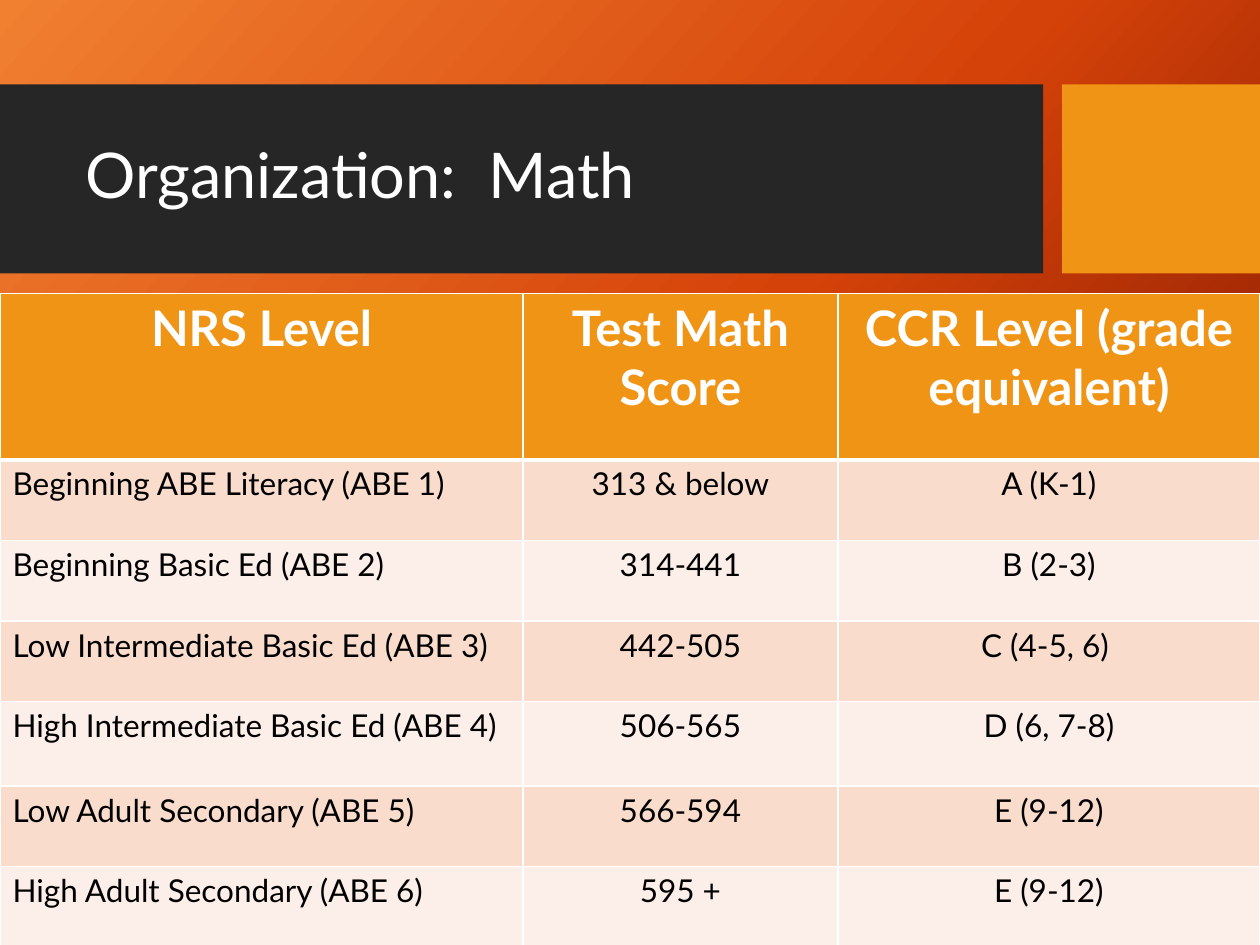
from copy import deepcopy

from lxml import etree
from pptx import Presentation
from pptx.dml.color import RGBColor
from pptx.enum.shapes import MSO_SHAPE
from pptx.enum.text import MSO_ANCHOR, PP_ALIGN
from pptx.oxml.ns import qn
from pptx.util import Inches, Pt

RECT = MSO_SHAPE.RECTANGLE
MIDDLE = MSO_ANCHOR.MIDDLE
LEFT, CENTER = PP_ALIGN.LEFT, PP_ALIGN.CENTER

WHITE = RGBColor(0xFF, 0xFF, 0xFF)
BLACK = RGBColor(0, 0, 0)
DARK = RGBColor(0x26, 0x26, 0x26)
AMBER = RGBColor(0xF0, 0x94, 0x15)
BANDS = (RGBColor(0xF9, 0xDC, 0xCC), RGBColor(0xFC, 0xEE, 0xE8))
GLOW = (RGBColor(0xF1, 0x80, 0x31), RGBColor(0xD5, 0x42, 0x09),
        RGBColor(0x6A, 0x0D, 0x00))

WIDTH, HEIGHT = 10, 7.5
BAND_TOP, BAND_HIGH = 0.67, 1.5
TABLE_TOP = 2.33
COLS = (4.15, 2.5, 3.35)
ROWS = (1.32, 0.64, 0.64, 0.64, 0.67, 0.64, 0.64)

TITLE = {"name": "Lato", "size": Pt(36), "bold": False}
HEAD = {"name": "Lato", "size": Pt(28), "bold": True}
BODY = {"name": "Lato", "size": Pt(18), "bold": False}
INSETS = {"margin_left": Inches(0.1), "margin_right": Inches(0.1),
          "margin_top": Inches(0.04), "margin_bottom": Inches(0.04)}

LEVELS = (
    ("NRS Level", "Test Math Score", "CCR Level (grade equivalent)"),
    ("Beginning ABE Literacy (ABE 1)", "313 & below", "A (K-1)"),
    ("Beginning Basic Ed (ABE 2)", "314-441", "B (2-3)"),
    ("Low Intermediate Basic Ed (ABE 3)", "442-505", "C (4-5, 6) "),
    ("High Intermediate Basic Ed (ABE 4)", "506-565", "D (6, 7-8)"),
    ("Low Adult Secondary (ABE 5)", "566-594", "E (9-12)"),
    ("High Adult Secondary (ABE 6)", "595 +", "E (9-12)"),
)


def apply(item, values):
    for name, value in values.items():
        setattr(item, name, value)


def write(frame, text, look, color, align):
    para = frame.paragraphs[0]
    para.alignment = align
    run = para.add_run()
    run.text = text
    apply(run.font, look)
    run.font.color.rgb = color
    return para


def paint_back(slide):
    """Fill the background with an evenly spaced diagonal gradient."""
    fill = slide.background.fill
    fill.gradient()
    fill.gradient_angle = 360 - 42
    stops = slide.element.find(".//" + qn("a:gsLst"))
    stops.append(deepcopy(stops[-1]))
    for i, (stop, color) in enumerate(zip(fill.gradient_stops, GLOW)):
        stop.color.rgb = color
        stop.position = i / (len(GLOW) - 1)


def add_block(slide, left, width, color):
    block = slide.shapes.add_shape(RECT, Inches(left), Inches(BAND_TOP),
                                   Inches(width), Inches(BAND_HIGH))
    block.shadow.inherit = False
    block.fill.solid()
    block.fill.fore_color.rgb = color
    block.line.fill.background()


def add_title(slide, text):
    box = slide.shapes.add_textbox(Inches(0.58), Inches(0.82),
                                   Inches(7.54), Inches(1.18))
    frame = box.text_frame
    frame.word_wrap = True
    frame.vertical_anchor = MIDDLE
    write(frame, text, TITLE, WHITE, LEFT).line_spacing = 0.9


def add_edges(cell, widths):
    """Draw white cell borders; widths maps L, R, T and B to points."""
    props = cell._tc.get_or_add_tcPr()
    for side, width in widths.items():
        line = etree.SubElement(props, qn("a:ln" + side), w=str(Pt(width)))
        solid = etree.SubElement(line, qn("a:solidFill"))
        etree.SubElement(solid, qn("a:srgbClr"), val=str(WHITE))


def fill_cell(cell, text, row, col):
    head = row == 0
    apply(cell, INSETS)
    add_edges(cell, {"L": 1, "R": 1, "T": 3 if row == 1 else 1,
                     "B": 3 if head else 1})
    cell.fill.solid()
    cell.fill.fore_color.rgb = AMBER if head else BANDS[(row - 1) % 2]
    write(cell.text_frame, text, HEAD if head else BODY,
          WHITE if head else BLACK, CENTER if head or col else LEFT)


def add_levels(slide):
    table = slide.shapes.add_table(
        len(ROWS), len(COLS), 0, Inches(TABLE_TOP),
        Inches(sum(COLS)), Inches(sum(ROWS))).table
    for col, width in zip(table.columns, COLS):
        col.width = Inches(width)
    for row, high in zip(table.rows, ROWS):
        row.height = Inches(high)
    for r, texts in enumerate(LEVELS):
        for c, text in enumerate(texts):
            fill_cell(table.cell(r, c), text, r, c)


def main():
    deck = Presentation()
    deck.slide_width, deck.slide_height = Inches(WIDTH), Inches(HEIGHT)
    slide = deck.slides.add_slide(deck.slide_layouts[6])
    paint_back(slide)
    add_block(slide, 0, 8.28, DARK)
    add_block(slide, 8.43, WIDTH - 8.43, AMBER)
    add_title(slide, "Organization:  Math")
    add_levels(slide)
    deck.save("out.pptx")


if __name__ == "__main__":
    main()
